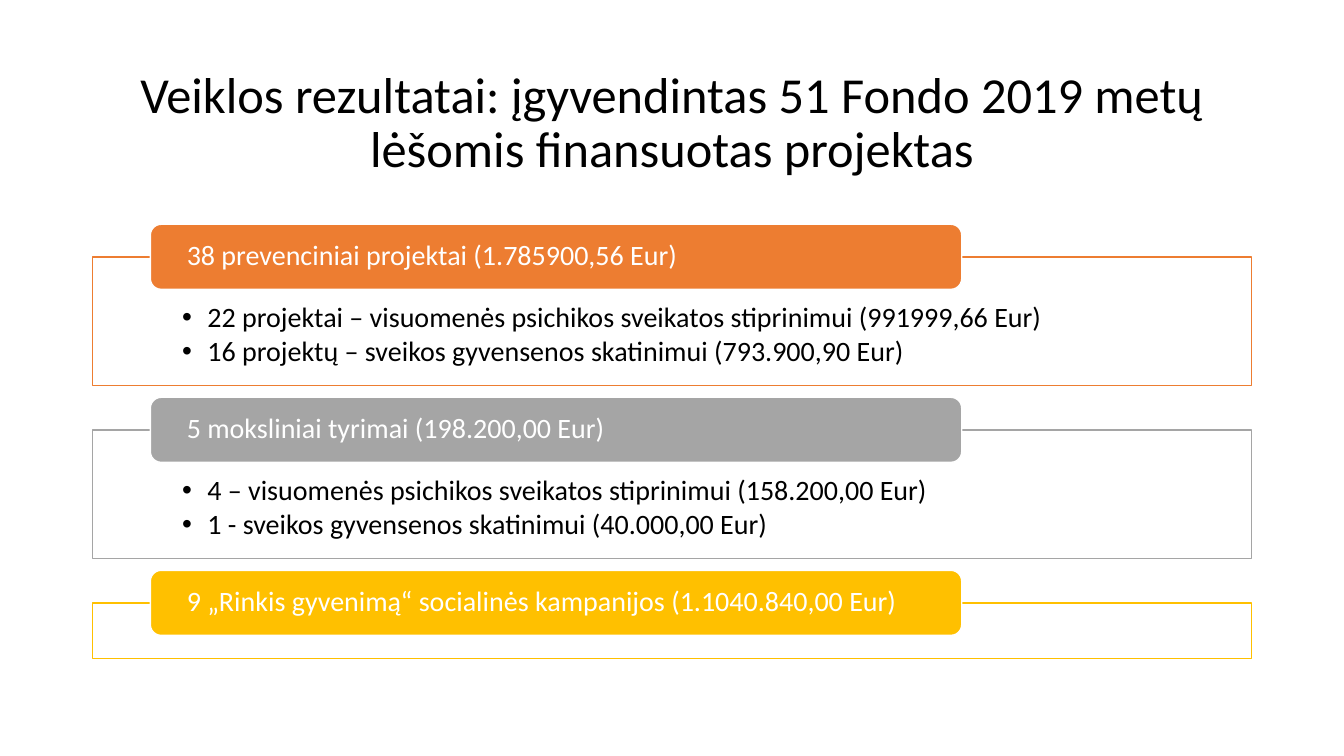
from dataclasses import dataclass

from lxml.etree import SubElement
from pptx import Presentation
from pptx.dml.color import RGBColor
from pptx.enum.shapes import MSO_SHAPE as Preset
from pptx.enum.text import MSO_ANCHOR as Anchor, MSO_AUTO_SIZE as AutoSize, PP_ALIGN as Align
from pptx.oxml.ns import qn
from pptx.util import Inches, Pt

BLACK = RGBColor(0x00, 0x00, 0x00)
WHITE = RGBColor(0xFF, 0xFF, 0xFF)
ORANGE = RGBColor(0xED, 0x7D, 0x31)
GRAY = RGBColor(0xA5, 0xA5, 0xA5)
GOLD = RGBColor(0xFF, 0xC0, 0x00)

# Grid of 160 columns by 90 rows
WIDTH, HEIGHT = Inches(13.33), Inches(7.5)
COLUMN, ROW = WIDTH / 160, HEIGHT / 90
LEFT, SPAN = 11, 138
FIRST_TOP, PITCH = 30.6, 20.6
BAND_LEFT, BAND_SPAN, BAND_ROWS, BAND_RISE = 17.9, 96.6, 7.75, 3.9


@dataclass
class Section:
    heading: str
    color: RGBColor
    rows: float
    items: tuple[str, ...] = ()


SECTIONS = [
    Section("38 prevenciniai projektai (1.785900,56 Eur)", ORANGE, 15.3, (
        "22 projektai – visuomenės psichikos sveikatos stiprinimui (991999,66 Eur)",
        "16 projektų – sveikos gyvensenos skatinimui (793.900,90 Eur)")),
    Section("5 moksliniai tyrimai (198.200,00 Eur)", GRAY, 15.3, (
        "4 – visuomenės psichikos sveikatos stiprinimui (158.200,00 Eur)",
        "1 - sveikos gyvensenos skatinimui (40.000,00 Eur)")),
    Section("9 „Rinkis gyvenimą“ socialinės kampanijos (1.1040.840,00 Eur)", GOLD, 6.6),
]


def place(box, left: float, top: float, columns: float, rows: float) -> None:
    """Put a box on the grid."""
    box.left, box.top = round(left * COLUMN), round(top * ROW)
    box.width, box.height = round(columns * COLUMN), round(rows * ROW)


def paint(box, fill: RGBColor, line: RGBColor, opacity: int = 100) -> None:
    box.fill.solid()
    box.fill.fore_color.rgb = fill
    if opacity < 100:
        color = box.fill._xPr.find(qn("a:solidFill"))[0]
        SubElement(color, qn("a:alpha"), val=str(opacity * 1000))
    box.line.color.rgb = line
    box.line.width = Pt(1)


def add_bullet(para) -> None:
    properties = para._p.get_or_add_pPr()
    properties.set("marL", str(Inches(0.25)))
    properties.set("indent", str(-Inches(0.25)))
    SubElement(properties, qn("a:buFont"), typeface="Arial")
    SubElement(properties, qn("a:buChar"), char="•")


def write(box, *lines: str, size: float = 20, color: RGBColor = BLACK, align=Align.LEFT,
          anchor=Anchor.MIDDLE, side: float = 0.1, top: float = 0.05,
          bottom: float = 0.05, after: float = 0, bullets: bool = False) -> None:
    """Fill a box with one paragraph per line; insets are in inches."""
    frame = box.text_frame
    frame.word_wrap, frame.auto_size = True, AutoSize.NONE
    frame.vertical_anchor = anchor
    frame.margin_left = frame.margin_right = Inches(side)
    frame.margin_top, frame.margin_bottom = Inches(top), Inches(bottom)
    for number, line in enumerate(lines):
        para = frame.add_paragraph() if number else frame.paragraphs[0]
        para.alignment, para.line_spacing = align, 0.9
        para.space_before, para.space_after = Pt(0), Pt(after)
        if bullets:
            para.level = 1
            add_bullet(para)
        span = para.add_run()
        span.text = line
        span.font.name, span.font.size = "Calibri", Pt(size)
        span.font.color.rgb = color


def add_preset(page, preset: Preset):
    shape = page.shapes.add_shape(preset, 0, 0, 0, 0)
    shape.shadow.inherit = False
    return shape


def draw_section(page, section: Section, top: float, bodies: list) -> None:
    # Outlined frame, holding the list if there is one
    frame = bodies.pop(0) if section.items else add_preset(page, Preset.RECTANGLE)
    place(frame, LEFT, top, SPAN, section.rows)
    paint(frame, WHITE, section.color, opacity=90)
    if section.items:
        write(frame, *section.items, anchor=Anchor.TOP, side=0.89, top=0.46,
              bottom=0.16, after=2.4, bullets=True)
    # Heading band over the frame's top edge
    band = add_preset(page, Preset.ROUNDED_RECTANGLE)
    place(band, BAND_LEFT, top - BAND_RISE, BAND_SPAN, BAND_ROWS)
    paint(band, section.color, WHITE)
    write(band, section.heading, color=WHITE, side=0.33, top=0, bottom=0)


def main() -> None:
    deck = Presentation()
    deck.slide_width, deck.slide_height = WIDTH, HEIGHT
    page = deck.slides.add_slide(deck.slide_layouts.get_by_name("Two Content"))

    # Title
    title = page.shapes.title
    place(title, LEFT, 7.35, SPAN, 14.9)
    write(title, "Veiklos rezultatai: įgyvendintas 51 Fondo 2019 metų "
          "lėšomis finansuotas projektas", size=36, align=Align.CENTER)

    # Sections at equal steps
    bodies = [page.placeholders[1], page.placeholders[2]]
    for number, section in enumerate(SECTIONS):
        draw_section(page, section, FIRST_TOP + number * PITCH, bodies)

    deck.save("out.pptx")


if __name__ == "__main__":
    main()
